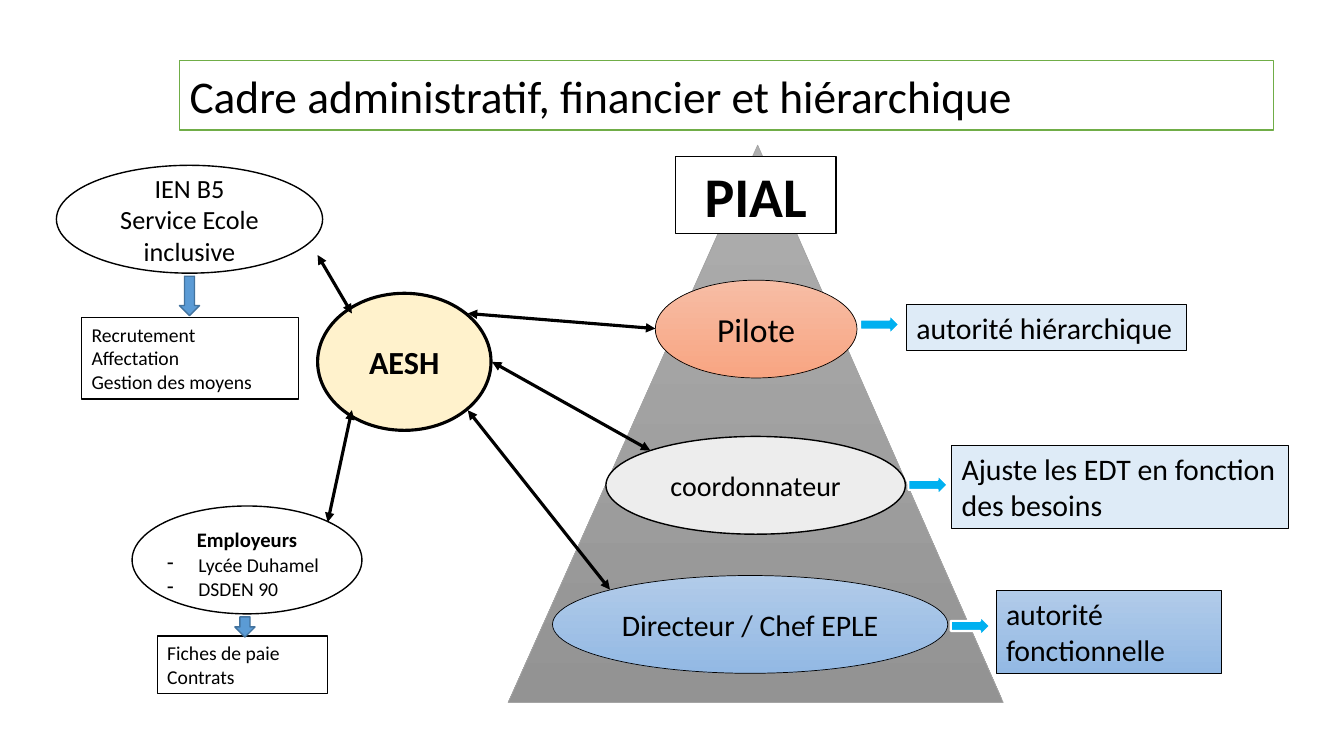
from lxml.etree import SubElement
from pptx import Presentation
from pptx.dml.color import RGBColor
from pptx.enum.shapes import MSO_CONNECTOR as Connector, MSO_SHAPE as Shape
from pptx.enum.text import MSO_ANCHOR as Anchor, MSO_AUTO_SIZE as AutoSize, PP_ALIGN as Align
from pptx.oxml.ns import qn
from pptx.util import Inches, Pt

BLACK, WHITE = "000000", "FFFFFF"
PALE_BLUE, CYAN = "DEEBF7", "00B0F0"
GREY_FADE = ("AFAFAF", "939393")
ORANGE_FADE = ("F7BDA5", "F8A582")
BLUE_FADE = ("B1CBE9", "93B9E4")


def color(value):
    return RGBColor.from_string(value)


def paint(shape, fill, line, width):
    """Fill with one colour, or with a top-to-bottom fade for a pair."""
    if isinstance(fill, tuple):
        shape.fill.gradient()
        shape.fill.gradient_angle = 270
        for stop, value in zip(shape.fill.gradient_stops, fill):
            stop.color.rgb = color(value)
    else:
        shape.fill.solid()
        shape.fill.fore_color.rgb = color(fill)
    shape.line.color.rgb = color(line)
    shape.line.width = Pt(width)


def write(shape, text, size=14, bold=False, align=Align.LEFT, anchor=Anchor.TOP,
          wrap=True, bullet=None):
    frame = shape.text_frame
    frame.auto_size = AutoSize.NONE
    frame.word_wrap = wrap
    frame.vertical_anchor = anchor
    for index, line in enumerate(text.split("\n")):
        para = frame.add_paragraph() if index else frame.paragraphs[0]
        para.alignment = align
        span = para.add_run()
        span.text = line
        span.font.name = "Calibri"
        span.font.size = Pt(size)
        span.font.bold = bold
        span.font.color.rgb = color(BLACK)
        if bullet:
            props = para._p.get_or_add_pPr()
            props.set("marL", str(Inches(0.31)))
            props.set("indent", str(-Inches(0.31)))
            SubElement(props, qn("a:buChar"), char=bullet)


def add_title(page, text, left, top, width, height):
    title = page.shapes.title
    title.left, title.top = Inches(left), Inches(top)
    title.width, title.height = Inches(width), Inches(height)
    outline = SubElement(title._element.spPr, qn("a:prstGeom"), prst="roundRect")
    SubElement(outline, qn("a:avLst"))
    paint(title, WHITE, "70AD47", 1)
    write(title, text, size=32.4, anchor=Anchor.MIDDLE)


def add_figure(page, kind, left, top, width, height, fill=WHITE, line=BLACK, weight=1):
    shape = page.shapes.add_shape(kind, Inches(left), Inches(top), Inches(width), Inches(height))
    shape.shadow.inherit = False
    paint(shape, fill, line, weight)
    return shape


def add_oval(page, text, *place, fill=WHITE, weight=1, anchor=Anchor.MIDDLE, **style):
    oval = add_figure(page, Shape.OVAL, *place, fill=fill, weight=weight)
    write(oval, text, align=Align.CENTER, anchor=anchor, **style)


def add_label(page, text, *place, fill=WHITE, weight=1, **style):
    label = add_figure(page, Shape.RECTANGLE, *place, fill=fill, weight=weight)
    write(label, text, **style)


def add_list(page, text, left, top, width, height):
    box = page.shapes.add_textbox(Inches(left), Inches(top), Inches(width), Inches(height))
    write(box, text, bullet="-")


def add_link(page, start, end):
    """Black line with an arrowhead at both ends."""
    link = page.shapes.add_connector(Connector.STRAIGHT, *map(Inches, start + end))
    link.line.color.rgb = color(BLACK)
    link.line.width = Pt(2.25)
    stroke = link.line._get_or_add_ln()
    for tip in ("a:headEnd", "a:tailEnd"):
        SubElement(stroke, qn(tip), type="triangle")
    SubElement(link._element.spPr, qn("a:effectLst"))


def main():
    deck = Presentation()
    deck.slide_width, deck.slide_height = Inches(13.33), Inches(7.5)
    page = deck.slides.add_slide(deck.slide_layouts[5])
    add_title(page, "Cadre administratif, financier et hiérarchique", 1.78, 0.6, 10.85, 0.69)

    # PIAL pyramid with its three levels
    pyramid = add_figure(page, Shape.ISOSCELES_TRIANGLE, 5.04, 1.44, 4.91, 5.53,
                         fill=GREY_FADE, line="A5A5A5", weight=0.5)
    pyramid.adjustments[0] = 0.504
    add_oval(page, "Pilote", 6.5, 2.78, 2, 0.97, fill=ORANGE_FADE, weight=0.5, size=24)
    add_oval(page, "coordonnateur", 6.01, 4.33, 2.97, 0.97, fill="EDEDED", size=20)
    add_oval(page, "Directeur / Chef EPLE", 5.48, 5.71, 3.92, 0.97,
             fill=BLUE_FADE, weight=0.5, size=21.3)
    add_label(page, "PIAL", 6.7, 1.55, 1.59, 0.77, size=40, bold=True, align=Align.CENTER)

    # Role of each level
    for left, top in ((8.53, 3.12), (9.01, 4.71), (9.43, 6.11)):
        add_figure(page, Shape.RIGHT_ARROW, left, top, 0.39, 0.2,
                   fill=CYAN, line=WHITE, weight=1.5)
    add_label(page, "autorité hiérarchique", 8.99, 3.02, 2.78, 0.46,
              fill=PALE_BLUE, weight=0.75, size=21.3, wrap=False)
    add_label(page, "Ajuste les EDT en fonction des besoins", 9.44, 4.42, 3.34, 0.82,
              fill=PALE_BLUE, weight=0.75, size=21.3)
    add_label(page, "autorité fonctionnelle", 9.88, 5.86, 2.23, 0.82,
              fill=BLUE_FADE, weight=0.5, size=21.3)

    # AESH, its supervising service and its employers
    add_oval(page, "AESH", 3.15, 2.91, 1.72, 1.36, fill="FFF2CC", weight=2.25,
             size=23, bold=True)
    add_oval(page, "IEN B5\nService Ecole inclusive", 0.56, 1.64, 2.64, 1.07, size=18.7)
    add_label(page, "Recrutement\nAffectation\nGestion des moyens", 0.81, 3.15, 2.15, 0.81)
    add_oval(page, "Employeurs", 1.31, 5.02, 2.28, 1.07, size=14.7, bold=True,
             anchor=Anchor.TOP)
    add_list(page, "Lycée Duhamel\nDSDEN 90", 1.56, 5.44, 2.07, 0.57)
    add_label(page, "Fiches de paie\nContrats", 1.56, 6.31, 1.69, 0.57)
    for left, top, height in ((1.78, 2.74, 0.39), (2.33, 6.12, 0.2)):
        add_figure(page, Shape.DOWN_ARROW, left, top, 0.2, height,
                   fill="5B9BD5", line="43739E")

    # Links between AESH and everyone else
    for start, end in (
        ((3.49, 3.11), (3.15, 2.53)),
        ((3.49, 4.07), (3.25, 5.18)),
        ((4.64, 3.11), (6.5, 3.26)),
        ((4.88, 3.59), (6.45, 4.47)),
        ((4.64, 4.07), (6.05, 5.85)),
    ):
        add_link(page, start, end)

    deck.save("out.pptx")


if __name__ == "__main__":
    main()
